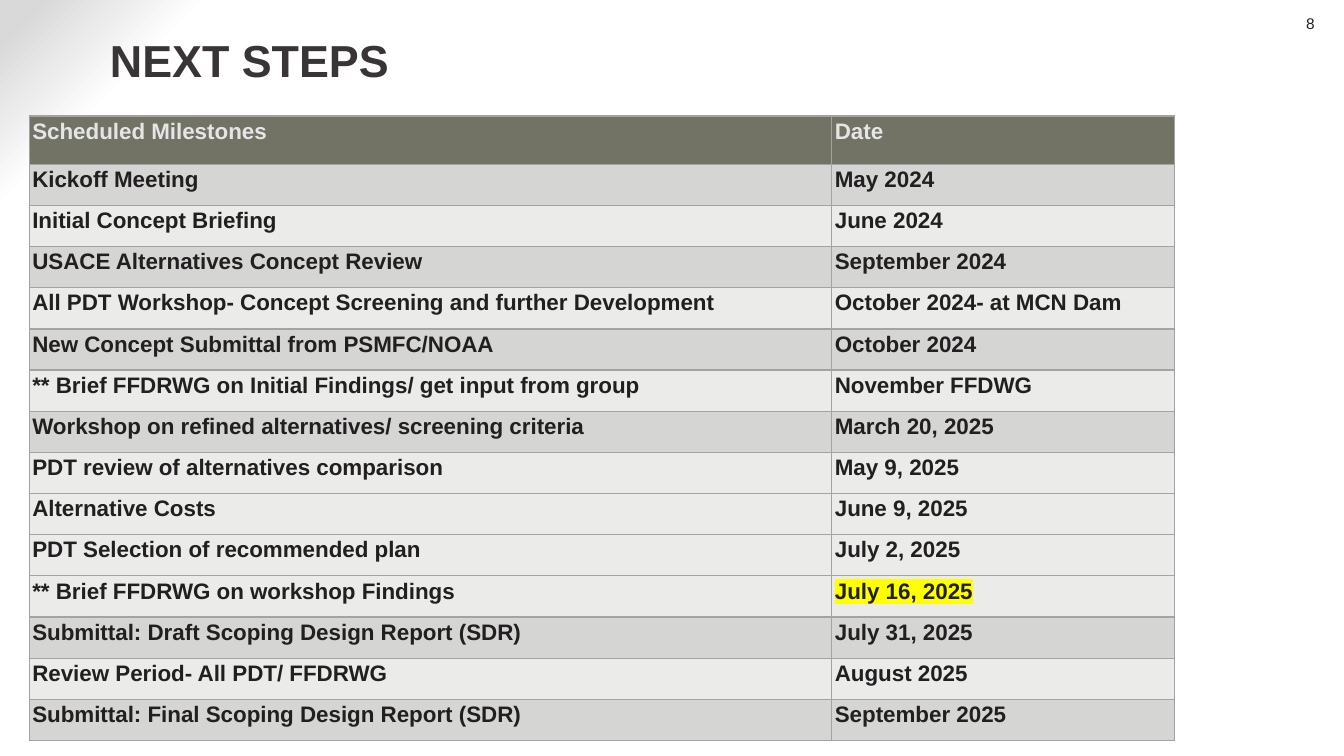
import dataclasses

import lxml.etree
import pptx
import pptx.dml.color
import pptx.enum.text
import pptx.oxml
import pptx.oxml.ns
import pptx.util

Inches = pptx.util.Inches
ALIGN = pptx.enum.text.PP_ALIGN
ANCHOR = pptx.enum.text.MSO_ANCHOR
NS = pptx.oxml.ns.nsdecls("a", "p")


@dataclasses.dataclass(frozen=True)
class Theme:
    font: str = "Arial"
    ink: str = "221F20"
    title: str = "393436"
    pale: str = "E5E5E5"
    head: str = "727365"
    dark: str = "D5D5D3"
    light: str = "EBEBEA"
    rule: str = "A3A3A3"
    mark: str = "FFFF00"
    white: str = "FFFFFF"
    corner: str = "D9D9D9"
    title_size: int = 32
    table_size: int = 16
    page_size: int = 11


THEME = Theme()

# Milestone, date, fill
ROWS = [
    ("Scheduled Milestones", "Date", THEME.head),
    ("Kickoff Meeting", "May 2024", THEME.dark),
    ("Initial Concept Briefing", "June 2024", THEME.light),
    ("USACE Alternatives Concept Review", "September 2024", THEME.dark),
    ("All PDT Workshop- Concept Screening and further Development",
     "October 2024- at MCN Dam", THEME.light),
    ("New Concept Submittal from PSMFC/NOAA", "October 2024", THEME.dark),
    ("** Brief FFDRWG on Initial Findings/ get input from group",
     "November FFDWG", THEME.light),
    ("Workshop on refined alternatives/ screening criteria",
     "March 20, 2025", THEME.dark),
    ("PDT review of alternatives comparison", "May 9, 2025", THEME.light),
    ("Alternative Costs", "June 9, 2025", THEME.light),
    ("PDT Selection of recommended plan", "July 2, 2025", THEME.light),
    ("** Brief FFDRWG on workshop Findings", "July 16, 2025", THEME.light),
    ("Submittal: Draft Scoping Design Report (SDR)", "July 31, 2025", THEME.dark),
    ("Review Period- All PDT/ FFDRWG", "August 2025", THEME.light),
    ("Submittal: Final Scoping Design Report (SDR)", "September 2025", THEME.dark),
]
MARKED = "July 16, 2025"
WIDTHS = (7.96, 3.4)
HEAD_HIGH, TABLE_HIGH = 0.48, 6.2


def rgb(color):
    return pptx.dml.color.RGBColor.from_string(color)


def write(frame, text, size, color, bold=False, align=ALIGN.LEFT):
    frame.text = text
    para = frame.paragraphs[0]
    para.alignment = align
    font = para.font
    font.name, font.size, font.bold = THEME.font, pptx.util.Pt(size), bold
    font.color.rgb = rgb(color)


def inset(item, left, rest):
    item.margin_left = Inches(left)
    item.margin_top = item.margin_right = item.margin_bottom = Inches(rest)


def add_back(slide):
    # White page with a grey glow in the top left corner
    stops = "".join(
        f'<a:gs pos="{at}000"><a:srgbClr val="{color}"/></a:gs>'
        for at, color in ((87, THEME.white), (90, THEME.white), (98, THEME.corner)))
    back = pptx.oxml.parse_xml(
        f'<p:bg {NS}><p:bgPr><a:gradFill><a:gsLst>{stops}</a:gsLst>'
        '<a:path path="circle"><a:fillToRect l="100000" t="100000"/></a:path>'
        '</a:gradFill><a:effectLst/></p:bgPr></p:bg>')
    slide.element.cSld.insert(0, back)


def add_title(slide, text):
    title = slide.shapes.title
    title.left, title.top = Inches(1.04), Inches(0.14)
    title.width, title.height = Inches(11.36), Inches(0.91)
    frame = title.text_frame
    frame.auto_size = pptx.enum.text.MSO_AUTO_SIZE.NONE
    frame.vertical_anchor = ANCHOR.MIDDLE
    inset(frame, 0.05, 0)
    write(frame, text, THEME.title_size, THEME.title, bold=True)


def add_page(slide, text):
    box = slide.shapes.add_textbox(
        Inches(12.44), Inches(0.14), Inches(0.6), Inches(0.19))
    frame = box.text_frame
    frame.word_wrap = True
    inset(frame, 0.1, 0)
    write(frame, text, THEME.page_size, THEME.ink, align=ALIGN.RIGHT)


def add_rules(cell):
    props = cell._tc.get_or_add_tcPr()
    for side in "LRTB":
        props.append(pptx.oxml.parse_xml(
            f'<a:ln{side} {NS} w="12700"><a:solidFill>'
            f'<a:srgbClr val="{THEME.rule}"/></a:solidFill></a:ln{side}>'))


def add_mark(run):
    tag = pptx.oxml.ns.qn
    mark = lxml.etree.SubElement(run.font._element, tag("a:highlight"))
    lxml.etree.SubElement(mark, tag("a:srgbClr"), val=THEME.mark)


def fill_cell(cell, text, fill):
    add_rules(cell)
    cell.fill.solid()
    cell.fill.fore_color.rgb = rgb(fill)
    inset(cell, 0.03, 0.03)
    cell.vertical_anchor = ANCHOR.TOP
    color = THEME.pale if fill == THEME.head else THEME.ink
    write(cell.text_frame, text, THEME.table_size, color, bold=True)
    if text == MARKED:
        add_mark(cell.text_frame.paragraphs[0].runs[0])


def add_grid(slide):
    table = slide.shapes.add_table(
        len(ROWS), len(WIDTHS), Inches(0.29), Inches(1.15),
        Inches(sum(WIDTHS)), Inches(TABLE_HIGH)).table
    table.horz_banding = False
    for col, wide in zip(table.columns, WIDTHS):
        col.width = Inches(wide)
    high = (TABLE_HIGH - HEAD_HIGH) / (len(ROWS) - 1)
    for num, (row, (*texts, fill)) in enumerate(zip(table.rows, ROWS)):
        row.height = Inches(high if num else HEAD_HIGH)
        for cell, text in zip(row.cells, texts):
            fill_cell(cell, text, fill)


def main():
    deck = pptx.Presentation()
    deck.slide_width, deck.slide_height = Inches(13.33), Inches(7.5)
    slide = deck.slides.add_slide(deck.slide_layouts.get_by_name("Title Only"))
    add_back(slide)
    add_page(slide, "8")
    add_title(slide, "NEXT STEPS")
    add_grid(slide)
    deck.save("out.pptx")


if __name__ == "__main__":
    main()
